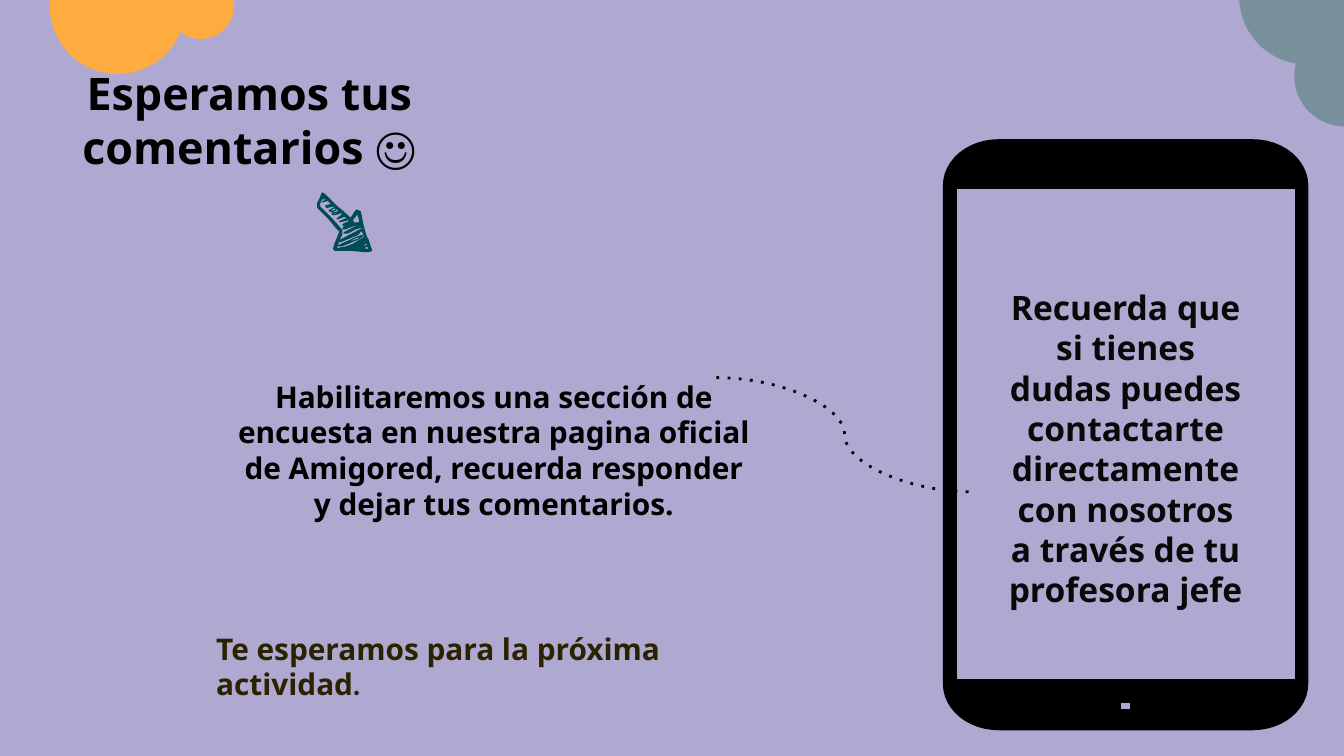
import math
import pptx
import pptx.util
import pptx.dml.color
import pptx.enum.dml
import pptx.enum.shapes
import pptx.enum.text
from dataclasses import dataclass
from lxml import etree

ALIGN = pptx.enum.text.PP_ALIGN
ANCHOR = pptx.enum.text.MSO_ANCHOR
OVAL = pptx.enum.shapes.MSO_SHAPE.OVAL
CURVE = pptx.enum.shapes.MSO_CONNECTOR.CURVE


@dataclass
class Theme:
    back: str = "AFA8D0"
    ink: str = "000000"
    soft: str = "090909"
    brown: str = "2B2300"
    teal: str = "004C54"
    grey: str = "78909C"
    gold: str = "FFAB40"
    white: str = "FFFFFF"
    font: str = "Noto Sans"
    stop: str = "Lato"
    head: int = 24
    note: int = 18
    body: int = 16


T = Theme()
WIDE = 10
HIGH = WIDE * 9 / 16
CELL = WIDE / 100  # the grid has 100 columns of square cells

# left, top, width, height in cells
TITLE = ("Esperamos tus comentarios ☺", (5.1, 3.9, 26.9, 9.6))
SURVEY = ("Habilitaremos una sección de encuesta en nuestra pagina oficial "
          "de Amigored, recuerda responder y dejar tus comentarios.",
          (16.5, 24.9, 40.5, 14.9))
REMIND = ("Recuerda que si tienes dudas puedes contactarte directamente "
          "con nosotros a través de tu profesora jefe",
          (73.75, 19.5, 20, 26.85))
CLOSE = ("Te esperamos para la próxima actividad", (15.1, 46.4, 37.8, 6.4))

# left, top, diameter, colour
CLOUDS = [(96.3, 1.9, 7.5, T.grey), (92.2, -5.3, 10.1, T.grey),
          (3.7, -4.6, 10.1, T.gold), (12.5, -2, 4.9, T.gold)]
TRAIL = (53.3, 28.1, 72.4, 36.6)

# left, top, right, bottom
PHONE = (70.3, 10.5, 97.2, 54.2)
SCREEN = (71.1, 13.9, 96.5, 50.7)
BUTTON = (83.3, 52.2, 84.2, 52.9)
BEND = (4, 3.3)

# arrow points in tenths of a cell, then its middle and its stretch
ARROW = [
    [(267, 157), (265, 159), (262, 163), (255, 158), (249, 154), (244, 150),
     (239, 146), (237, 145), (236, 147), (235, 149), (233, 152), (233, 155),
     (238, 159), (244, 164), (250, 170), (253, 172), (252, 173), (248, 181),
     (247, 184), (248, 185), (253, 185), (261, 185), (275, 186), (278, 186),
     (280, 185), (279, 183), (277, 178), (275, 175), (272, 166), (271, 161),
     (270, 158)],
    [(275, 180), (276, 180), (278, 185), (273, 184), (272, 184), (276, 182),
     (275, 182), (268, 183), (266, 183), (267, 183), (273, 181), (275, 180),
     (273, 180), (266, 182), (263, 183), (260, 183), (262, 183), (266, 182),
     (273, 179), (275, 178)],
    [(274, 176), (264, 181), (257, 183), (250, 184), (249, 184), (251, 179),
     (253, 179), (256, 178), (268, 174), (270, 172), (272, 171)],
    [(270, 165), (269, 166), (265, 166), (256, 169), (255, 170), (257, 170),
     (260, 169), (267, 167), (270, 167), (271, 167), (268, 168), (263, 170),
     (258, 172), (256, 173), (259, 173), (266, 170), (270, 169), (272, 169),
     (272, 170), (253, 178), (251, 178), (252, 177), (254, 174), (254, 171),
     (244, 162), (235, 155), (234, 153), (237, 148), (239, 148), (237, 149),
     (240, 149), (242, 150), (247, 154), (251, 157), (254, 159), (255, 160),
     (250, 163), (257, 161), (261, 165), (258, 166), (255, 167), (256, 168),
     (263, 166), (264, 165), (263, 164), (268, 159)],
]
STROKES = [
    [(252, 159), (253, 158), (252, 158), (246, 159), (246, 160), (248, 160)],
    [(246, 154), (246, 153), (245, 153), (240, 154), (241, 155)],
    [(259, 163), (258, 163), (252, 165), (258, 164)],
    [(248, 157), (249, 156), (248, 155), (244, 157), (243, 157), (245, 158)],
    [(238, 151), (237, 151), (242, 150), (243, 149), (242, 149)],
    [(267, 176), (262, 178), (251, 182), (250, 182), (254, 182), (260, 180),
     (269, 177), (272, 175), (271, 175)],
]
MID = (256, 166)
FIT = (0.85, 1.06)


def span(cells):
    return pptx.util.Inches(cells * CELL)


def tint(code):
    return pptx.dml.color.RGBColor.from_string(code)


def write(shape, text, size=T.body, color=T.ink, align=ALIGN.CENTER,
          anchor=ANCHOR.TOP, stop=""):
    """Fill a shape with bold text; stop is a closing mark in the second font."""
    frame = shape.text_frame
    frame.word_wrap = True
    frame.auto_size = pptx.enum.text.MSO_AUTO_SIZE.NONE
    frame.vertical_anchor = anchor
    frame.margin_left = frame.margin_right = span(1)
    frame.margin_top = frame.margin_bottom = span(1 if align == ALIGN.CENTER else 0.5)
    para = frame.paragraphs[0]
    para.alignment = align
    for part, face in ((text, T.font), (stop, T.stop)):
        if part:
            run = para.add_run()
            run.text = part
            run.font.name = face
            run.font.size = pptx.util.Pt(size)
            run.font.bold = True
            run.font.color.rgb = tint(color)


def paint(shape, fill, line=None, width=0.75):
    shape.shadow.inherit = False
    shape.fill.solid()
    shape.fill.fore_color.rgb = tint(fill)
    if line:
        shape.line.color.rgb = tint(line)
        shape.line.width = pptx.util.Pt(width)
    else:
        shape.line.fill.background()


def trace(shapes, rings):
    """Draw closed rings as one outline; inner rings become holes."""
    fine = 1000  # keeps fractions, as the builder rounds to whole units
    rings = [[(x * fine, y * fine) for x, y in ring] for ring in rings]
    pen = shapes.build_freeform(*rings[0][0], scale=span(1) / fine)
    pen.add_line_segments(rings[0][1:], close=True)
    for ring in rings[1:]:
        pen.move_to(*ring[0])
        pen.add_line_segments(ring[1:], close=True)
    return pen.convert_to_shape()


def fit(ring):
    """Stretch arrow points about the arrow's middle and turn them into cells."""
    return [tuple((mid + (at - mid) * rate) / 10
                  for at, mid, rate in zip(point, MID, FIT)) for point in ring]


def box(left, top, right, low):
    return [(left, top), (right, top), (right, low), (left, low)]


def curved(left, top, right, low, bend, steps=12):
    """Corner points of a box rounded by quarter ellipses."""
    rx, ry = bend
    hubs = [(right - rx, low - ry), (left + rx, low - ry),
            (left + rx, top + ry), (right - rx, top + ry)]
    ring = []
    for turn, (x, y) in enumerate(hubs):
        for step in range(steps + 1):
            angle = (turn + step / steps) * math.pi / 2
            ring.append((x + rx * math.cos(angle), y + ry * math.sin(angle)))
    return ring


def main():
    deck = pptx.Presentation()
    deck.slide_width = pptx.util.Inches(WIDE)
    deck.slide_height = pptx.util.Inches(HIGH)
    slide = deck.slides.add_slide(deck.slide_layouts[5])
    slide.background.fill.solid()
    slide.background.fill.fore_color.rgb = tint(T.back)
    shapes = slide.shapes

    for left, top, size, color in CLOUDS:
        paint(shapes.add_shape(OVAL, *map(span, (left, top, size, size))), color)

    text, place = TITLE
    title = shapes.title
    title.left, title.top, title.width, title.height = map(span, place)
    write(title, text, size=T.head)

    for (text, place), style in (
            (SURVEY, dict(anchor=ANCHOR.BOTTOM)),
            (REMIND, dict(anchor=ANCHOR.BOTTOM, size=T.note, color=T.soft)),
            (CLOSE, dict(align=ALIGN.LEFT, color=T.brown, stop="."))):
        write(shapes.add_textbox(*map(span, place)), text, **style)

    trail = shapes.add_connector(CURVE, *map(span, TRAIL))
    trail.line.color.rgb = tint(T.ink)
    trail.line.width = pptx.util.Pt(1.5)
    trail.line.dash_style = pptx.enum.dml.MSO_LINE.ROUND_DOT
    space = "{http://schemas.openxmlformats.org/drawingml/2006/main}"
    trail.element.find(f".//{space}prstDash").set("val", "dot")
    etree.SubElement(trail.element.spPr, space + "effectLst")

    paint(trace(shapes, map(fit, ARROW)), T.teal, T.teal)
    for stroke in STROKES:
        paint(trace(shapes, [fit(stroke)]), T.white, T.teal)
    phone = [curved(*PHONE, BEND), box(*SCREEN), box(*BUTTON)]
    paint(trace(shapes, phone), T.ink, T.ink, 2)

    deck.save("out.pptx")


if __name__ == "__main__":
    main()
